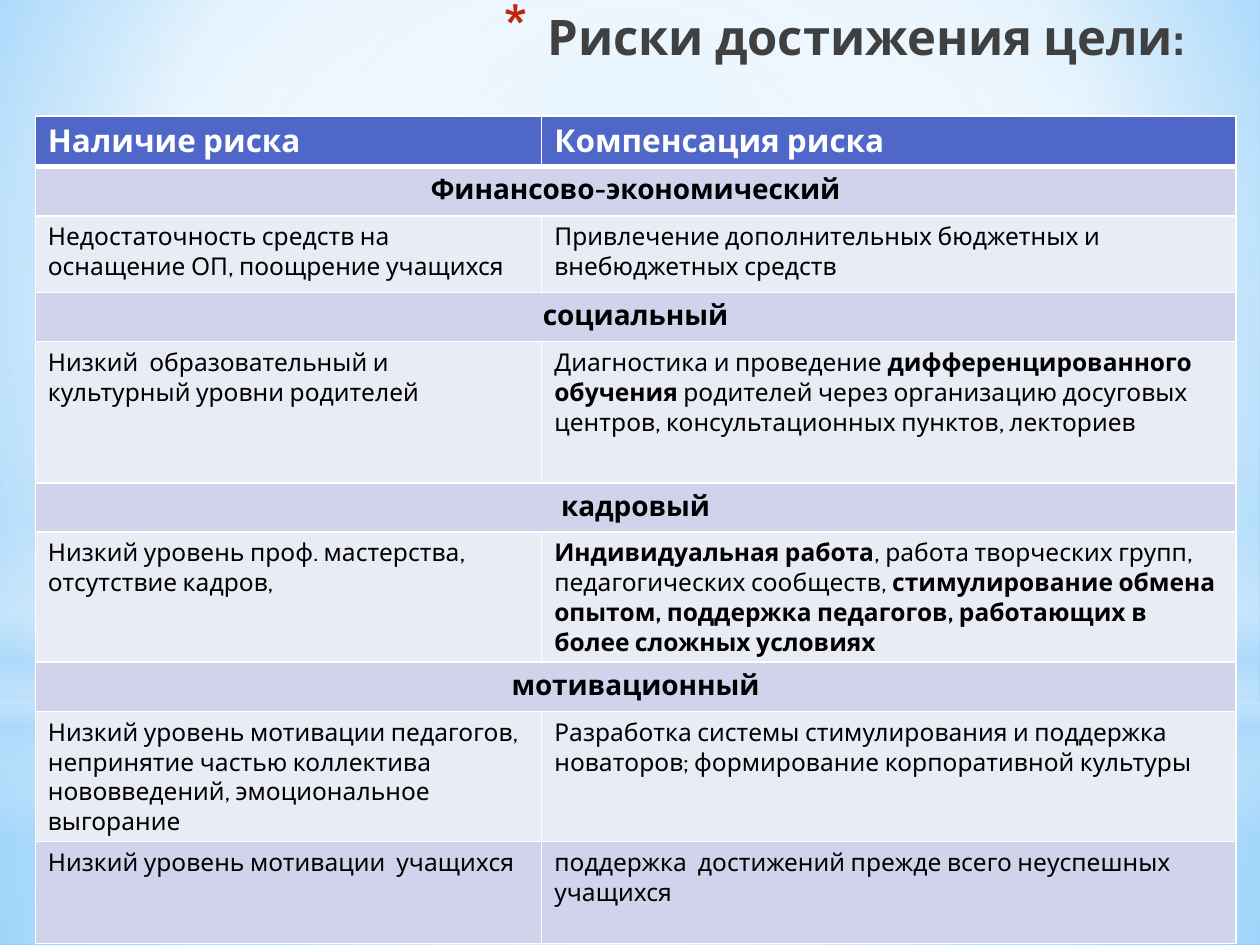
from lxml import etree
from pptx import Presentation
from pptx import util as u
from pptx.dml.color import RGBColor
from pptx.enum import shapes, text
from pptx.oxml import parse_xml
from pptx.oxml.ns import nsdecls, qn

WHITE = RGBColor(0xFF, 0xFF, 0xFF)
BLACK = RGBColor(0x00, 0x00, 0x00)
GREY = RGBColor(0x40, 0x40, 0x40)
RED = RGBColor(0xC3, 0x26, 0x0C)
BLUE = RGBColor(0x4E, 0x67, 0xC8)
BAND = RGBColor(0xD0, 0xD3, 0xEB)
PALE = RGBColor(0xE9, 0xEB, 0xF5)
SKY = RGBColor(0xB4, 0xDC, 0xFA)
LIGHT = RGBColor(0x9E, 0xD5, 0xFF)
DEEP = RGBColor(0x5B, 0xB9, 0xFF)
FONT = "Cabin"


def paint(node, stops, rect=None):
    """Turn the first solid fill in node into a gradient of (place, colour, opacity).

    It is circular around rect (left, top, right, bottom), or vertical without one.
    """
    marks = "".join(
        f'<a:gs pos="{pos * 1000}"><a:srgbClr val="{color}">'
        f'<a:alpha val="{alpha * 1000}"/></a:srgbClr></a:gs>'
        for pos, color, alpha in stops)
    if rect:
        sides = " ".join(f'{side}="{share * 1000}"' for side, share in zip("ltrb", rect))
        shade = f'<a:path path="circle"><a:fillToRect {sides}/></a:path>'
    else:
        shade = '<a:lin ang="5400000" scaled="0"/>'
    solid = node.find(".//" + qn("a:solidFill"))
    solid.getparent().replace(solid, parse_xml(
        f'<a:gradFill {nsdecls("a")} rotWithShape="1">'
        f'<a:gsLst>{marks}</a:gsLst>{shade}</a:gradFill>'))


def write(frame, words, size=14, color=BLACK, align=text.PP_ALIGN.LEFT):
    """Fill the first paragraph; parts between double asterisks are bold."""
    para = frame.paragraphs[0]
    para.alignment = align
    for i, part in enumerate(words.split("**")):
        if part:
            run = para.add_run()
            run.text = part
            run.font.name = FONT
            run.font.size = u.Pt(size)
            run.font.bold = i % 2 == 1
            run.font.color.rgb = color
    return para


deck = Presentation()
deck.slide_width, deck.slide_height = u.Inches(10), u.Inches(7.5)
W, H = deck.slide_width, deck.slide_height
slide = deck.slides.add_slide(deck.slide_layouts[6])

# Background and its soft layers of light
slide.background.fill.solid()
paint(slide.element, [(0, LIGHT, 100), (60, WHITE, 100), (100, DEEP, 100)], (20, 10, 20, 60))

MID = (50, 50, 50, 50)
BOX, OVAL = shapes.MSO_SHAPE.RECTANGLE, shapes.MSO_SHAPE.OVAL
layers = [  # shape, top and height as shares of the slide, stops, centre
    (BOX, 0.744, 0.256, [(0, WHITE, 91), (37, WHITE, 76), (100, SKY, 79)], MID),
    (BOX, 0, 0.744, [(0, WHITE, 89), (48, WHITE, 62), (100, SKY, 79)], MID),
    (BOX, 0.55, 0.333, [(0, WHITE, 0), (29, WHITE, 30), (45, SKY, 40),
                        (55, WHITE, 26), (65, SKY, 60), (100, WHITE, 0)], None),
    (OVAL, 0.233, 0.744, [(0, WHITE, 100), (56, WHITE, 0)], MID),
]
for kind, top, tall, stops, rect in layers:
    layer = slide.shapes.add_shape(kind, 0, int(H * top), W, int(H * tall))
    layer.shadow.inherit = False
    layer.line.fill.background()
    layer.fill.solid()
    paint(layer.element, stops, rect)

# Title
title = slide.shapes.add_textbox(int(W * 0.083), 0, int(W * 0.867), int(H * 0.123))
title.text_frame.word_wrap = True
para = write(title.text_frame, "**Риски достижения цели:**", size=28, color=GREY,
             align=text.PP_ALIGN.RIGHT)
props = para._p.get_or_add_pPr()
props.set("marL", str(u.Inches(0.35)))
props.set("indent", str(-u.Inches(0.35)))
etree.SubElement(etree.SubElement(props, qn("a:buClr")), qn("a:srgbClr"), val=str(RED))
etree.SubElement(props, qn("a:buSzPct"), val="128000")
etree.SubElement(props, qn("a:buChar"), char="*")

# Table: a row of one entry is a heading across both columns
rows = [
    (0.39, BLUE, "**Наличие риска**", "**Компенсация риска**"),
    (0.39, BAND, "**Финансово-экономический**"),
    (0.61, PALE, "Недостаточность средств на оснащение ОП, поощрение учащихся",
     "Привлечение дополнительных бюджетных и внебюджетных средств"),
    (0.39, BAND, "**социальный**"),
    (1.12, PALE, "Низкий  образовательный и культурный уровни родителей",
     "Диагностика и проведение **дифференцированного обучения **родителей "
     "через организацию досуговых центров, консультационных пунктов, лекториев"),
    (0.39, BAND, "**кадровый**"),
    (0.86, PALE, "Низкий уровень проф. мастерства, отсутствие кадров,",
     "**Индивидуальная работа**, работа творческих групп, педагогических сообществ, "
     "**стимулирование обмена опытом, поддержка педагогов, работающих в более "
     "сложных условиях**"),
    (0.39, BAND, "**мотивационный**"),
    (0.86, PALE, "Низкий уровень мотивации педагогов, непринятие частью коллектива "
     "нововведений, эмоциональное выгорание",
     "Разработка системы стимулирования и поддержка новаторов; "
     "формирование корпоративной культуры"),
    (0.81, BAND, "Низкий уровень мотивации  учащихся",
     "поддержка  достижений прежде всего неуспешных учащихся"),
]
cols = [4.02, 5.51]
table = slide.shapes.add_table(
    len(rows), len(cols), int(W * 0.028), int(H * 0.123),
    u.Inches(sum(cols)), u.Inches(sum(row[0] for row in rows))).table
table.horz_banding = False
for col, wide in zip(table.columns, cols):
    col.width = u.Inches(wide)

for r, (tall, color, *words) in enumerate(rows):
    table.rows[r].height = u.Inches(tall)
    head = r == 0
    for c in range(len(cols)):
        cell = table.cell(r, c)
        cell.fill.solid()
        cell.fill.fore_color.rgb = color
        for i, side in enumerate("LRTB"):
            thick = 3 if (head and side == "B") or (r == 1 and side == "T") else 1
            cell._tc.get_or_add_tcPr().insert(i, parse_xml(
                f'<a:ln{side} {nsdecls("a")} w="{u.Pt(thick)}"><a:solidFill>'
                f'<a:srgbClr val="{WHITE}"/></a:solidFill></a:ln{side}>'))
    if len(words) == 1:
        table.cell(r, 0).merge(table.cell(r, 1))
        write(table.cell(r, 0).text_frame, words[0], size=16, align=text.PP_ALIGN.CENTER)
    else:
        for c, word in enumerate(words):
            write(table.cell(r, c).text_frame, word, size=18 if head else 14,
                  color=WHITE if head else BLACK)

deck.save("out.pptx")
